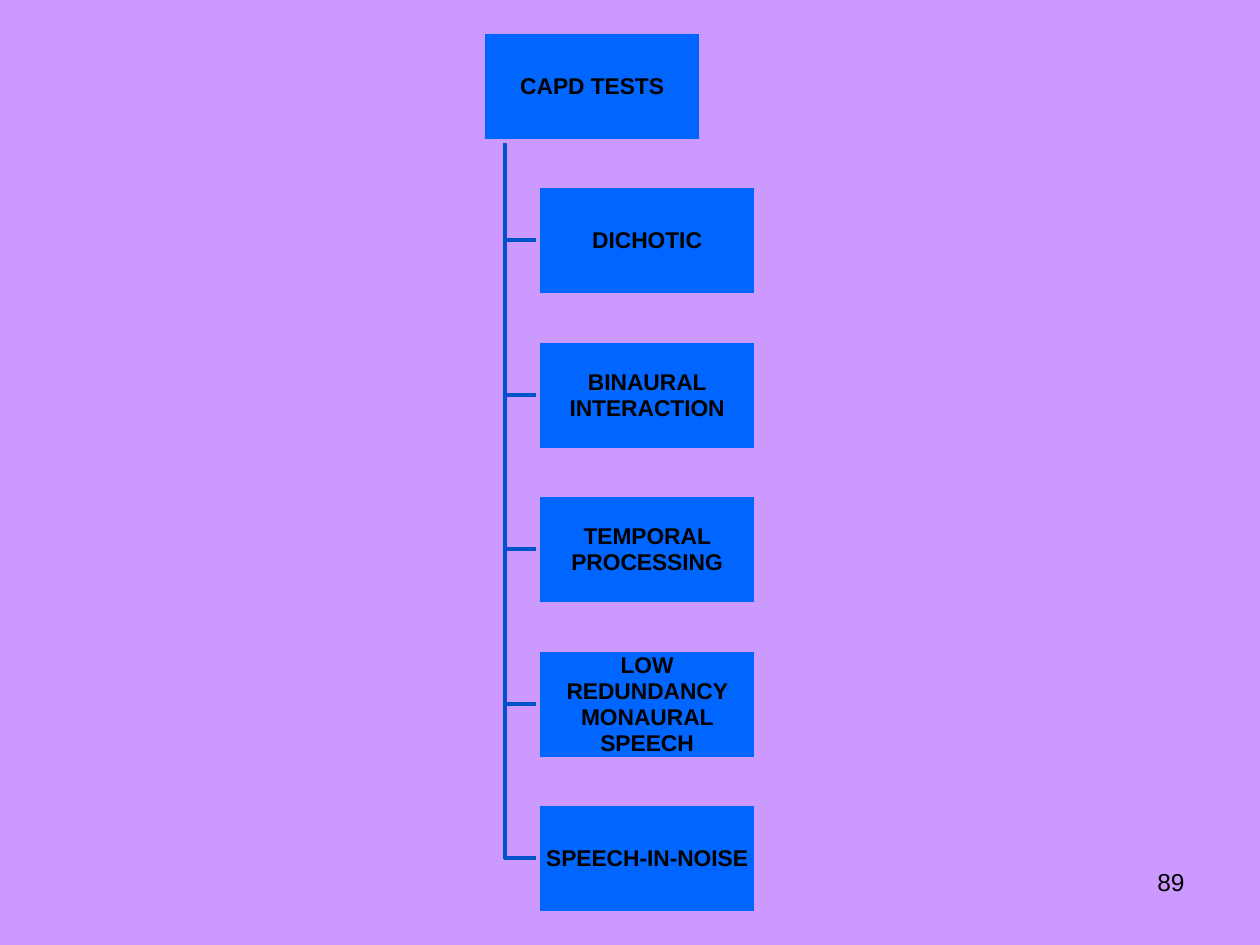
from dataclasses import dataclass

from pptx import Presentation
from pptx.dml.color import RGBColor
from pptx.enum import shapes, text
from pptx.util import Pt

SCALE = 914400 / 126  # EMU per px


@dataclass(frozen=True)
class Theme:
    background: RGBColor = RGBColor(0xCC, 0x99, 0xFF)
    box: RGBColor = RGBColor(0x00, 0x66, 0xFF)
    branch: RGBColor = RGBColor(0x00, 0x52, 0xCC)
    ink: RGBColor = RGBColor(0, 0, 0)
    font: str = "Arial"
    box_size: int = 13
    box_spacing: float = 0.95  # lets four lines fit in a box
    number_size: int = 14
    line_width: int = 2


THEME = Theme()
TESTS = ["DICHOTIC", "BINAURAL INTERACTION", "TEMPORAL PROCESSING",
         "LOW REDUNDANCY MONAURAL SPEECH", "SPEECH-IN-NOISE"]

# Tree layout in px
BOX_W, BOX_H = 218, 109
ROOT_X, TEST_X, TRUNK_X = 483, 538, 505
ROOT_Y, LAST_Y = 32, 804


def px(n):
    return round(n * SCALE)


def row_top(row):
    return ROOT_Y + round(row * (LAST_Y - ROOT_Y) / len(TESTS))


def set_text(tf, words, size, align, bold=False):
    tf.word_wrap = True
    tf.text = words
    p = tf.paragraphs[0]
    p.alignment = align
    font = p.runs[0].font
    font.name, font.size, font.bold = THEME.font, Pt(size), bold
    font.color.rgb = THEME.ink
    return p


def set_line(sp, color):
    sp.shadow.inherit = False
    sp.line.color.rgb = color
    sp.line.width = Pt(THEME.line_width)


def add_branch(slide, end_y):
    builder = slide.shapes.build_freeform(TRUNK_X, ROOT_Y + BOX_H, scale=SCALE)
    builder.add_line_segments([(TRUNK_X, end_y), (TEST_X, end_y)], close=False)
    sp = builder.convert_to_shape()
    sp.fill.background()
    set_line(sp, THEME.branch)


def add_box(slide, x, y, words):
    sp = slide.shapes.add_shape(shapes.MSO_SHAPE.RECTANGLE,
                                px(x), px(y), px(BOX_W), px(BOX_H))
    sp.fill.solid()
    sp.fill.fore_color.rgb = THEME.box
    set_line(sp, THEME.background)
    tf = sp.text_frame
    tf.vertical_anchor = text.MSO_ANCHOR.MIDDLE
    tf.margin_left = tf.margin_right = tf.margin_top = tf.margin_bottom = px(1)
    p = set_text(tf, words, THEME.box_size, text.PP_ALIGN.CENTER, bold=True)
    p.line_spacing = THEME.box_spacing


def add_page_number(slide, number):
    sp = slide.shapes.add_textbox(px(903), px(861), px(294), px(65))
    set_text(sp.text_frame, number, THEME.number_size, text.PP_ALIGN.RIGHT)


def main():
    prs = Presentation()
    prs.slide_width, prs.slide_height = px(1260), px(945)
    slide = prs.slides.add_slide(prs.slide_layouts[6])
    slide.background.fill.solid()
    slide.background.fill.fore_color.rgb = THEME.background

    # Branches lie behind the boxes
    for row in range(len(TESTS), 0, -1):
        add_branch(slide, row_top(row) + BOX_H // 2)

    # Root and its tests
    add_box(slide, ROOT_X, ROOT_Y, "CAPD TESTS")
    for row, name in enumerate(TESTS, start=1):
        add_box(slide, TEST_X, row_top(row), name)

    add_page_number(slide, "89")
    prs.save("out.pptx")


if __name__ == "__main__":
    main()
